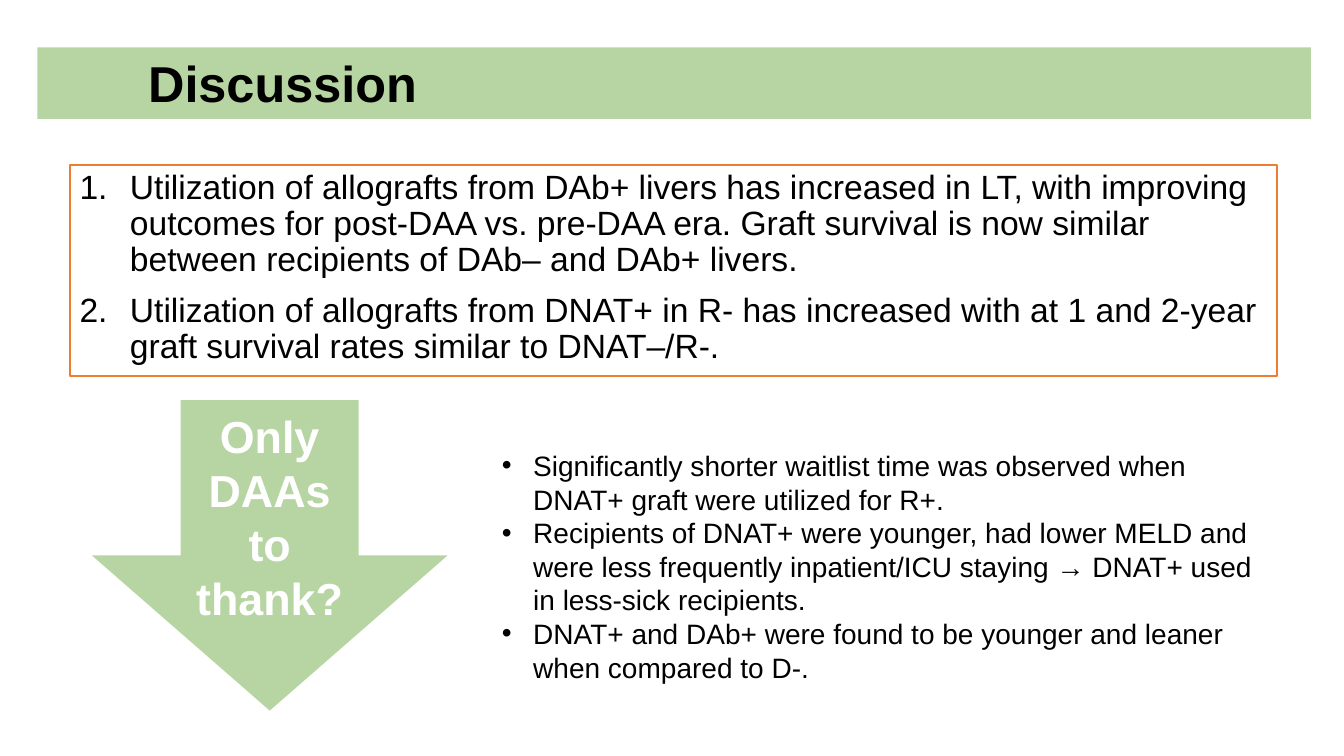
from dataclasses import dataclass
from typing import Optional

from lxml import etree
from pptx import Presentation
from pptx import util as u
from pptx.dml.color import RGBColor
from pptx.enum import shapes, text
from pptx.oxml.ns import qn

SLIDE_W, SLIDE_H = u.Inches(13.33), u.Inches(7.5)


@dataclass(frozen=True)
class Theme:
    font: str = "Arial"
    green: str = "70AD47"
    orange: str = "ED7D31"
    white: str = "FFFFFF"
    black: str = "000000"
    green_opacity: int = 50
    title: int = 36
    callout: int = 32
    body: int = 24
    notes: int = 20


THEME = Theme()


@dataclass(frozen=True)
class Area:
    """Position and size in percent of the slide's width and height."""
    left: float
    top: float
    width: float
    height: float

    def box(self) -> tuple[int, int, int, int]:
        return (int(SLIDE_W * self.left / 100), int(SLIDE_H * self.top / 100),
                int(SLIDE_W * self.width / 100), int(SLIDE_H * self.height / 100))


@dataclass(frozen=True)
class TextStyle:
    size: int
    color: str = THEME.black
    bold: bool = False
    align: text.PP_ALIGN = text.PP_ALIGN.LEFT
    anchor: text.MSO_ANCHOR = text.MSO_ANCHOR.TOP
    margin: float = 0
    hanging: float = 0
    marker: Optional[tuple[str, str, str]] = None  # tag, attribute, value
    line_spacing: float = 1.0
    space_before: int = 0


@dataclass(frozen=True)
class Block:
    area: Area
    paragraphs: tuple[str, ...]
    style: TextStyle
    preset: Optional[shapes.MSO_SHAPE] = None  # None makes a text box
    fill: Optional[str] = None
    opacity: int = 100
    line: Optional[str] = None


NUMBER = ("a:buAutoNum", "type", "arabicPeriod")
BULLET = ("a:buChar", "char", "•")

BLOCKS = (
    Block(Area(2.78, 6.27, 94.75, 9.47), ("Discussion",),
          TextStyle(THEME.title, bold=True, margin=1),
          shapes.MSO_SHAPE.RECTANGLE, THEME.green, THEME.green_opacity),
    Block(Area(5.18, 21.87, 89.87, 27.87),
          ("Utilization of allografts from DAb+ livers has increased in LT, with improving "
           "outcomes for post-DAA vs. pre-DAA era. Graft survival is now similar "
           "between recipients of DAb– and DAb+ livers.",
           "Utilization of allografts from DNAT+ in R- has increased with at 1 and 2-year "
           "graft survival rates similar to DNAT–/R-."),
          TextStyle(THEME.body, margin=0.5, hanging=0.5, marker=NUMBER,
                    line_spacing=0.9, space_before=10),
          shapes.MSO_SHAPE.RECTANGLE, THEME.white, line=THEME.orange),
    Block(Area(36.61, 58.67, 58.44, 32.8),
          ("Significantly shorter waitlist time was observed when DNAT+ graft were "
           "utilized for R+.",
           "Recipients of DNAT+ were younger, had lower MELD and were less frequently "
           "inpatient/ICU staying → DNAT+ used in less-sick recipients.",
           "DNAT+ and DAb+ were found to be younger and leaner when compared to D-."),
          TextStyle(THEME.notes, margin=0.31, hanging=0.31, marker=BULLET)),
    Block(Area(6.83, 52.93, 26.48, 41.07), ("Only DAAs to thank?",),
          TextStyle(THEME.callout, THEME.white, True, text.PP_ALIGN.CENTER,
                    text.MSO_ANCHOR.MIDDLE),
          shapes.MSO_SHAPE.DOWN_ARROW, THEME.green, THEME.green_opacity),
)


def style_shape(sp, block: Block) -> None:
    sp.shadow.inherit = False
    sp.fill.solid()
    sp.fill.fore_color.rgb = RGBColor.from_string(block.fill)
    if block.opacity < 100:
        color = sp.fill._xPr.find(f"{qn('a:solidFill')}/{qn('a:srgbClr')}")
        etree.SubElement(color, qn("a:alpha"), val=str(block.opacity * 1000))
    if block.line:
        sp.line.color.rgb = RGBColor.from_string(block.line)
        sp.line.width = u.Pt(1.5)
    else:
        sp.line.fill.background()


def style_paragraph(p, style: TextStyle) -> None:
    p.alignment = style.align
    p.line_spacing = style.line_spacing
    p.space_before = u.Pt(style.space_before)
    p_pr = p._p.get_or_add_pPr()
    p_pr.set("marL", str(u.Inches(style.margin)))
    p_pr.set("indent", str(-u.Inches(style.hanging)))
    if style.marker:
        tag, attribute, value = style.marker
        etree.SubElement(p_pr, qn("a:buFont"), typeface=THEME.font)
        etree.SubElement(p_pr, qn(tag), {attribute: value})


def write_text(tf, paragraphs: tuple[str, ...], style: TextStyle) -> None:
    tf.word_wrap = True
    tf.vertical_anchor = style.anchor
    for i, words in enumerate(paragraphs):
        p = tf.add_paragraph() if i else tf.paragraphs[0]
        style_paragraph(p, style)
        r = p.add_run()
        r.text = words
        r.font.name = THEME.font
        r.font.size = u.Pt(style.size)
        r.font.bold = style.bold
        r.font.color.rgb = RGBColor.from_string(style.color)


def draw_block(s, block: Block) -> None:
    if block.preset is None:
        sp = s.shapes.add_textbox(*block.area.box())
    else:
        sp = s.shapes.add_shape(block.preset, *block.area.box())
        style_shape(sp, block)
    write_text(sp.text_frame, block.paragraphs, block.style)


def main() -> None:
    prs = Presentation()
    prs.slide_width, prs.slide_height = SLIDE_W, SLIDE_H
    s = prs.slides.add_slide(prs.slide_layouts[6])
    for block in BLOCKS:
        draw_block(s, block)
    prs.save("out.pptx")


if __name__ == "__main__":
    main()
